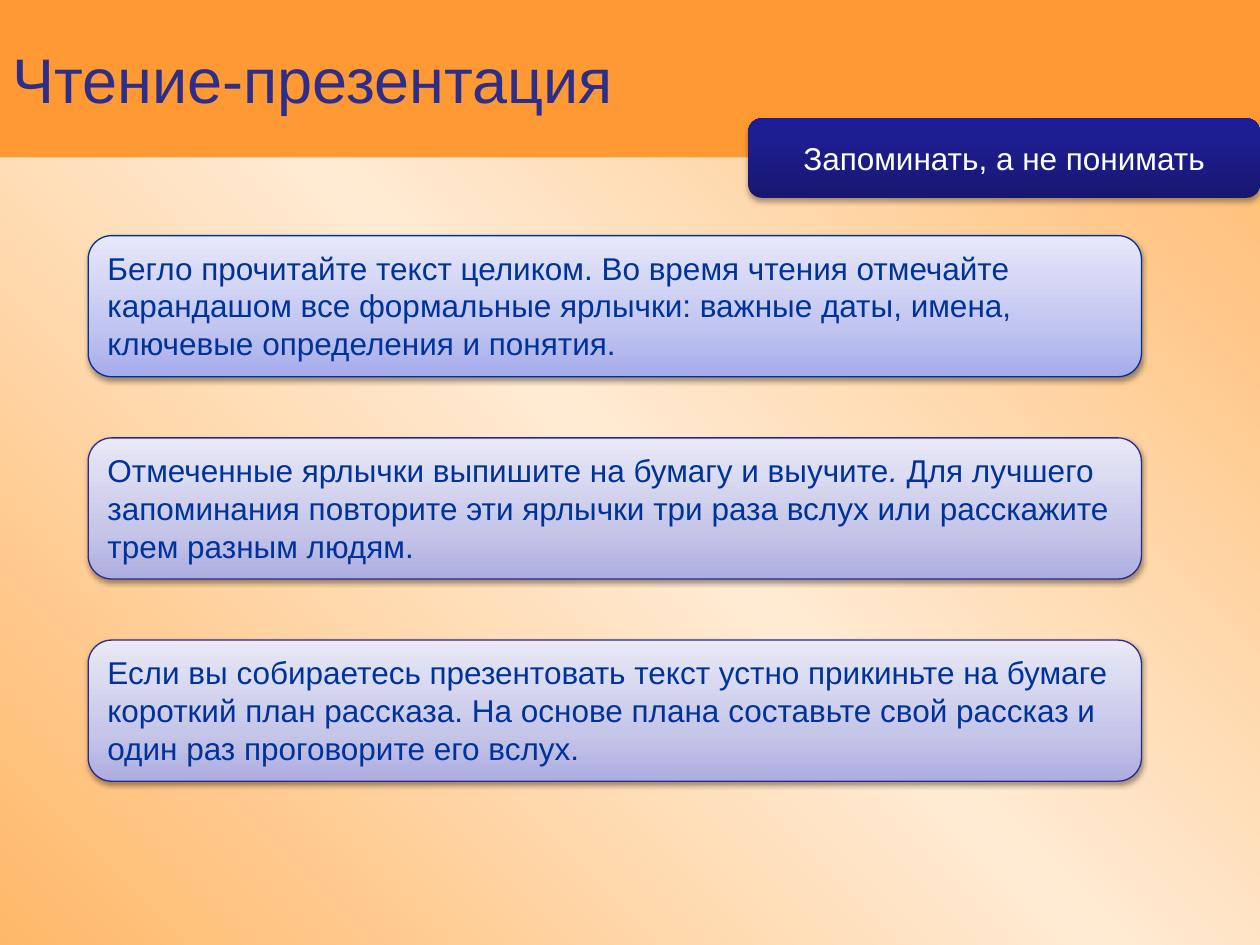
from lxml import etree
from pptx import Presentation
from pptx.dml.color import RGBColor
from pptx.enum.shapes import MSO_SHAPE
from pptx.enum.text import MSO_ANCHOR, MSO_AUTO_SIZE, PP_ALIGN
from pptx.oxml.ns import qn
from pptx.util import Inches, Pt

FONT = "Arial"
BACKGROUND = [(0, "FFB869"), (50, "FFEBD4"), (100, "FFB869")]
BLUE_CARD = [(0, "A5ABEB"), (35, "C1C5F0"), (100, "E7E8FA")]
VIOLET_CARD = [(0, "ADADE1"), (35, "C6C6E9"), (100, "E9E9F7")]
TAG = [(0, "171771"), (80, "1E1E93"), (100, "1C1C96")]

# Each card: gradient, outline colour, runs of (text, italic)
CARDS = [
    (BLUE_CARD, "003296", [
        ("Бегло прочитайте текст целиком. Во время чтения отмечайте карандашом все "
         "формальные ярлычки: важные даты, имена, ключевые определения и понятия.", False)]),
    (VIOLET_CARD, "2A2A89", [
        ("Отмеченные ярлычки выпишите на бумагу и выучите", False),
        (".", True),
        (" Для лучшего запоминания повторите эти ярлычки три раза вслух или "
         "расскажите трем разным людям.", False)]),
    (VIOLET_CARD, "2A2A89", [
        ("Если вы собираетесь презентовать текст устно прикиньте на бумаге короткий "
         "план рассказа. На основе плана составьте свой рассказ и один раз "
         "проговорите его вслух.", False)]),
]


def color(hex_value):
    return RGBColor.from_string(hex_value)


def add_color(parent, hex_value):
    return etree.SubElement(parent, qn("a:srgbClr"), val=hex_value)


def set_gradient(fill, properties, stops, angle):
    """Fill the properties element with a linear gradient, angle clockwise."""
    fill.solid()
    gradient = etree.Element(qn("a:gradFill"), rotWithShape="1")
    stop_list = etree.SubElement(gradient, qn("a:gsLst"))
    for position, hex_value in stops:
        stop = etree.SubElement(stop_list, qn("a:gs"), pos=str(position * 1000))
        add_color(stop, hex_value)
    etree.SubElement(gradient, qn("a:lin"), ang=str(angle * 60000), scaled="0")
    properties.replace(properties.find(qn("a:solidFill")), gradient)


def add_shadow(shape, distance, opacity):
    effects = shape._element.spPr.find(qn("a:effectLst"))
    shadow = etree.SubElement(
        effects, qn("a:outerShdw"), blurRad=str(Pt(3.1)), dist=str(Pt(distance)),
        dir=str(90 * 60000), rotWithShape="0")
    etree.SubElement(add_color(shadow, "000000"), qn("a:alpha"), val=str(opacity * 1000))


def add_box(slide, kind, box, anchor):
    shape = slide.shapes.add_shape(kind, *(Inches(length) for length in box))
    shape.shadow.inherit = False
    shape.line.fill.background()
    shape.text_frame.word_wrap = True
    shape.text_frame.vertical_anchor = anchor
    return shape


def write(shape, runs, size, hex_value, alignment=PP_ALIGN.LEFT):
    paragraph = shape.text_frame.paragraphs[0]
    paragraph.alignment = alignment
    for text, italic in runs:
        run = paragraph.add_run()
        run.text = text
        run.font.name = FONT
        run.font.size = Pt(size)
        run.font.italic = italic
        run.font.color.rgb = color(hex_value)


def add_title_band(slide, box):
    band = add_box(slide, MSO_SHAPE.RECTANGLE, box, MSO_ANCHOR.MIDDLE)
    band.fill.solid()
    band.fill.fore_color.rgb = color("FF9933")
    write(band, [("Чтение-презентация", False)], 36, "2D2D8A")


def add_cards(slide, box):
    left, top, width, height = box
    card_height = 1.12
    step = (height - card_height) / (len(CARDS) - 1)
    for index, (stops, outline, runs) in enumerate(CARDS):
        card = add_box(slide, MSO_SHAPE.ROUNDED_RECTANGLE,
                       (left, top + index * step, width, card_height), MSO_ANCHOR.TOP)
        set_gradient(card.fill, card._element.spPr, stops, 270)
        card.line.color.rgb = color(outline)
        card.line.width = Pt(0.75)
        add_shadow(card, 1.6, 38)
        card.text_frame.auto_size = MSO_AUTO_SIZE.SHAPE_TO_FIT_TEXT
        write(card, runs, 18, "003399")


def add_tag(slide, box):
    tag = add_box(slide, MSO_SHAPE.ROUNDED_RECTANGLE, box, MSO_ANCHOR.MIDDLE)
    set_gradient(tag.fill, tag._element.spPr, TAG, 270)
    add_shadow(tag, 1.8, 35)
    write(tag, [("Запоминать, а не понимать", False)], 18, "FFFFFF", PP_ALIGN.CENTER)


def main():
    presentation = Presentation()
    presentation.slide_width = Inches(10)
    presentation.slide_height = Inches(7.5)
    slide = presentation.slides.add_slide(presentation.slide_layouts[6])

    # Background
    fill = slide.background.fill
    fill.solid()
    set_gradient(fill, slide.element.find(".//" + qn("p:bgPr")), BACKGROUND, 315)

    # Title, reading steps, and the tag overlapping the title band
    add_title_band(slide, (0, 0, 10, 1.25))
    add_cards(slide, (0.7, 1.87, 8.36, 4.33))
    add_tag(slide, (5.94, 0.94, 4.06, 0.63))
    presentation.save("out.pptx")


if __name__ == "__main__":
    main()
